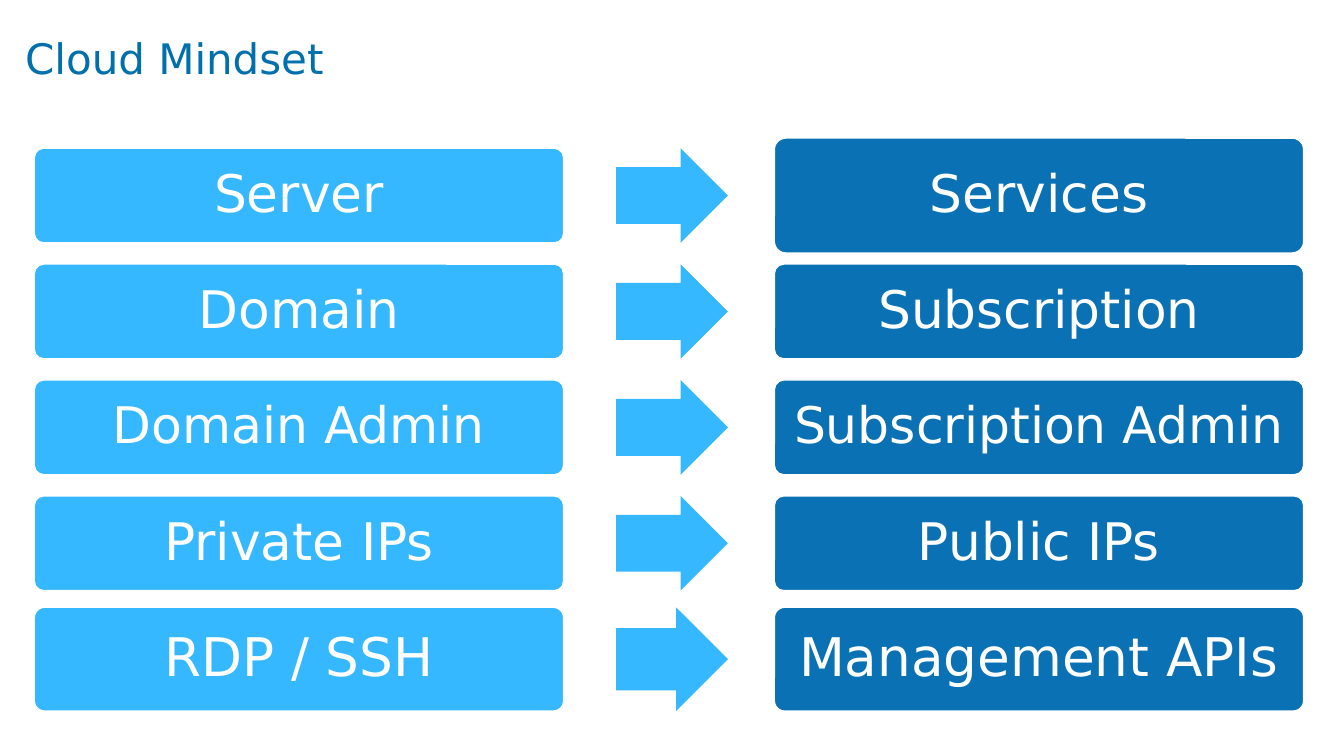
from pptx import Presentation
from pptx.dml.color import RGBColor
from pptx.enum.shapes import MSO_SHAPE
from pptx.enum.text import MSO_ANCHOR, PP_ALIGN
from pptx.util import Inches, Pt

ROUNDED, ARROW = MSO_SHAPE.ROUNDED_RECTANGLE, MSO_SHAPE.RIGHT_ARROW
MIDDLE = MSO_ANCHOR.MIDDLE
LEFT, CENTER = PP_ALIGN.LEFT, PP_ALIGN.CENTER

TITLE = "Cloud Mindset"
# before, after, text size, height of before and arrow, height of after
MINDSET_SHIFTS = [
    ("Server", "Services", 37, 0.94, 1.14),
    ("Domain", "Subscription", 37, 0.94, 0.94),
    ("Domain Admin", "Subscription Admin", 36, 0.94, 0.94),
    ("Private IPs", "Public IPs", 37, 0.94, 0.94),
    ("RDP / SSH", "Management APIs", 38, 1.03, 1.03),
]

FONT = "DejaVu Sans"
TITLE_BLUE = RGBColor(0x00, 0x70, 0xAD)
SKY = RGBColor(0x35, 0xB8, 0xFF)
DEEP_BLUE = RGBColor(0x0A, 0x71, 0xB4)
WHITE = RGBColor(0xFF, 0xFF, 0xFF)

SLIDE_W, SLIDE_H = 13.33, 7.5
BEFORE_X, ARROW_X, AFTER_X = 0.34, 6.11, 7.68
BOX_W, ARROW_W = 5.25, 1.11
FIRST_CENTER, ROW_PITCH = 1.94, 1.15


def write(holder, wording, size, color, align, inset=0):
    frame = holder.text_frame
    frame.word_wrap = True
    frame.vertical_anchor = MIDDLE
    frame.margin_left = frame.margin_right = Inches(inset)
    frame.margin_top = frame.margin_bottom = Inches(inset)
    line = frame.paragraphs[0]
    line.alignment = align
    line.line_spacing = 0.9
    run = line.add_run()
    run.text = wording
    run.font.name = FONT
    run.font.size = Pt(size)
    run.font.color.rgb = color


def add_block(slide, preset, x, center, width, height, fill, adjustments):
    block = slide.shapes.add_shape(
        preset, Inches(x), Inches(center - height / 2), Inches(width), Inches(height))
    block.shadow.inherit = False
    block.fill.solid()
    block.fill.fore_color.rgb = fill
    block.line.fill.background()
    for index, share in enumerate(adjustments):
        block.adjustments[index] = share
    return block


def add_box(slide, wording, size, x, center, height, fill):
    box = add_block(slide, ROUNDED, x, center, BOX_W, height, fill, [0.1])
    box.line.color.rgb = WHITE
    box.line.width = Pt(1)
    write(box, wording, size, WHITE, CENTER, 0.05)


def main():
    """Build the cloud mindset slide."""
    deck = Presentation()
    deck.slide_width, deck.slide_height = Inches(SLIDE_W), Inches(SLIDE_H)
    slide = deck.slides.add_slide(deck.slide_layouts[6])

    heading = slide.shapes.add_textbox(Inches(0.25), 0, Inches(12.17), Inches(1.21))
    write(heading, TITLE, 30, TITLE_BLUE, LEFT)

    for row, (before, after, size, height, after_height) in enumerate(MINDSET_SHIFTS):
        center = FIRST_CENTER + row * ROW_PITCH
        add_box(slide, before, size, BEFORE_X, center, height, SKY)
        add_block(slide, ARROW, ARROW_X, center, ARROW_W, height, SKY, [0.6, 0.5])
        add_box(slide, after, size, AFTER_X, center, after_height, DEEP_BLUE)

    deck.save("out.pptx")


if __name__ == "__main__":
    main()
